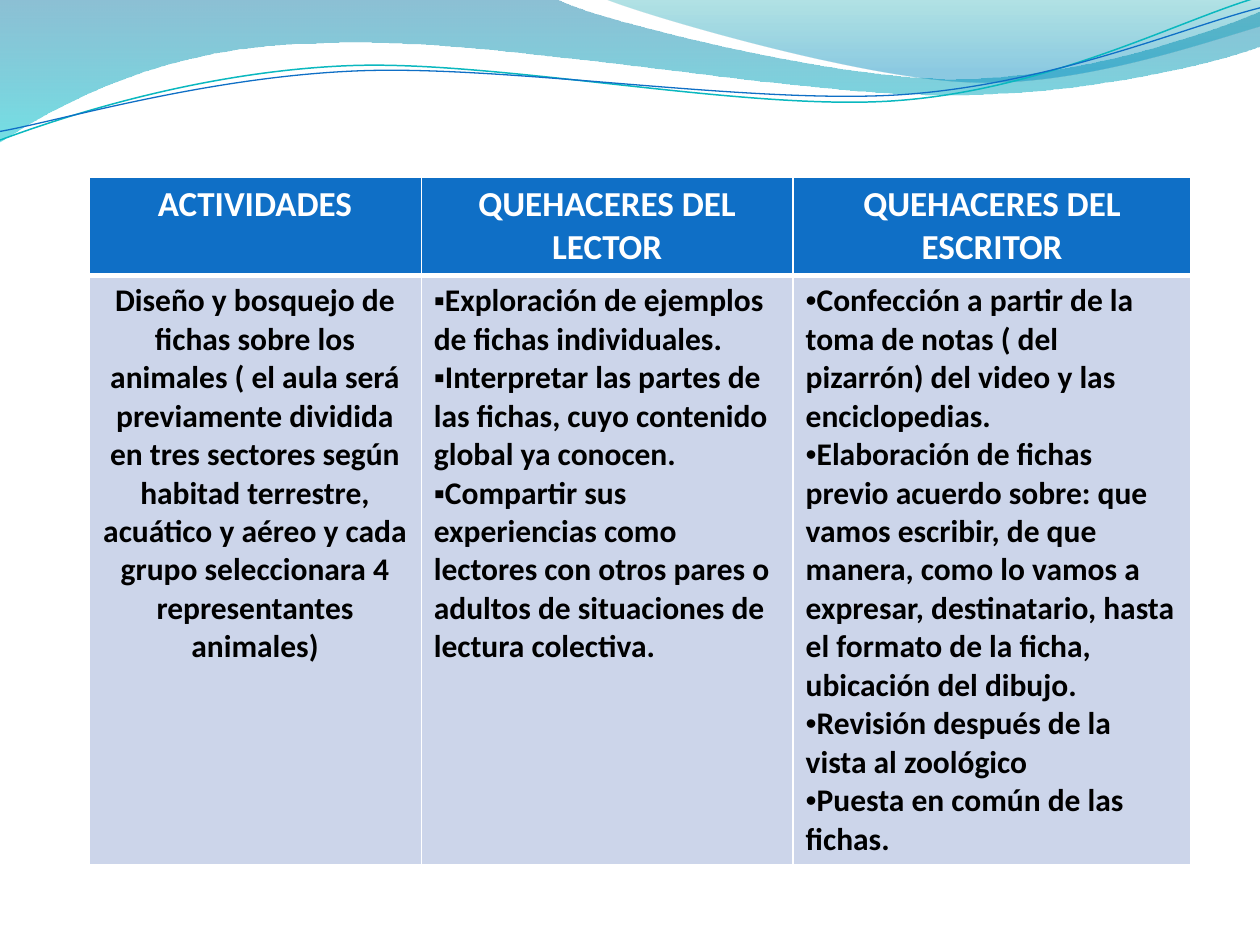
"""Build the slide with the reader and writer activities table under a wave header."""
from lxml.etree import SubElement
from pptx import Presentation
from pptx.dml.color import RGBColor
from pptx.enum.text import PP_ALIGN as Align
from pptx.oxml.ns import qn
from pptx.util import Pt

WHITE, BLUE, PALE = "FFFFFF", "0F6FC6", "CCD5EA"

WAVES = [
    ((0, -1), [(317, -1), (343, 12, 478, 45, 546, 45), (614, 45, 690, 19, 720, 6.5),
               (721, 26), (708, 32, 626, 55, 537, 54), (448, 54, 275, 20, 185, 24.5),
               (93, 25, 33, 60, -1, 81.5), (0, -1)],
     [(0, "0074A1", 45), (1, "00C6CF", 55)]),
    ((345, -1), [(366, 8, 491, 45, 554, 47), (616, 50, 692, 23, 720, 15), (720, 0),
                 (345, -1)],
     [(0, "00A1A9", 30), (0.8, "008BBF", 45)]),
]
LINES = [
    ((-1.4, 63.1), [(34.2, 51.7, 114.3, 29.4, 199.4, 30),
                    (284.4, 30.5, 425.8, 67.2, 512, 64.7),
                    (599.2, 62.3, 676.1, 25.9, 720.6, 15.4)], "0AB8BF", 0.85),
    ((-1.1, 58.1), [(33.1, 53.7, 118.2, 32.6, 204.3, 33.2),
                    (290.3, 33.7, 429.1, 63.3, 515.3, 61.4),
                    (601.4, 59.4, 679, 30, 721.4, 21.5)], BLUE, 0.75),
]
HEADERS = ["ACTIVIDADES", "QUEHACERES DEL LECTOR", "QUEHACERES DEL ESCRITOR"]
BODY = [
    (None, ["Diseño y bosquejo de fichas sobre los animales ( el aula será previamente "
            "dividida en tres sectores según habitad terrestre, acuático y aéreo y cada "
            "grupo seleccionara 4 representantes animales)"]),
    ("▪", ["Exploración de ejemplos de fichas individuales.",
           "Interpretar las partes de las fichas, cuyo contenido global ya conocen.",
           "Compartir sus experiencias como lectores con otros pares o adultos de "
           "situaciones de lectura colectiva."]),
    ("•", ["Confección a partir de la toma de notas ( del pizarrón) del video y las "
           "enciclopedias.",
           "Elaboración de fichas previo acuerdo sobre: que vamos escribir, de que manera, "
           "como lo vamos a expresar, destinatario, hasta el formato de la ficha, "
           "ubicación del dibujo.",
           "Revisión después de la vista al zoológico",
           "Puesta en común de las fichas."]),
]


def rgb(color):
    """Turn a hex string into a colour."""
    return RGBColor.from_string(color)


def add_outline(s, start, segments, close):
    """Add a freeform of straight (2 values) and cubic (6 values) segments."""
    points = [(Pt(x), Pt(y)) for seg in segments for x, y in zip(seg[::2], seg[1::2])]
    builder = s.shapes.build_freeform(Pt(start[0]), Pt(start[1]))
    builder.add_line_segments(points, close=close)
    sp = builder.convert_to_shape()
    sp.shadow.inherit = False
    steps = iter(list(sp.element.iter(qn("a:lnTo"))))
    for seg in segments:
        step = next(steps)
        if len(seg) == 6:
            curve = step.makeelement(qn("a:cubicBezTo"))
            step.addprevious(curve)
            for part in (step, next(steps), next(steps)):
                curve.append(part[0])
                part.getparent().remove(part)
    return sp


def add_wave(s, start, segments, stops):
    """Add a closed wave with a translucent top-to-bottom gradient."""
    sp = add_outline(s, start, segments, True)
    sp.line.fill.background()
    sp.fill.gradient()
    sp.fill.gradient_angle = 270
    for stop, (position, color, _) in zip(sp.fill.gradient_stops, stops):
        stop.position = position
        stop.color.rgb = rgb(color)
    for clr, (_, _, opacity) in zip(sp.element.iter(qn("a:srgbClr")), stops):
        SubElement(clr, qn("a:alpha"), val=str(opacity * 1000))


def add_curve(s, start, segments, color, width):
    """Add an open curved line, slightly tilted."""
    sp = add_outline(s, start, segments, False)
    sp.rotation = 357.3
    sp.fill.background()
    sp.line.color.rgb = rgb(color)
    sp.line.width = Pt(width)


def set_borders(cell, top, bottom):
    """Give a cell white borders with the given top and bottom widths."""
    tc_pr = cell._tc.get_or_add_tcPr()
    for side, width in zip("LRTB", (1, 1, top, bottom)):
        ln = SubElement(tc_pr, qn(f"a:ln{side}"), w=str(Pt(width)))
        fill = SubElement(ln, qn("a:solidFill"))
        SubElement(fill, qn("a:srgbClr"), val=WHITE)


def fill_cell(cell, texts, size, color, fill, bullet=None):
    """Write bold paragraphs in a cell, bulleted or centred."""
    cell.fill.solid()
    cell.fill.fore_color.rgb = rgb(fill)
    tf = cell.text_frame
    tf.text = "\n".join(texts)
    for p in tf.paragraphs:
        p.alignment = Align.LEFT if bullet else Align.CENTER
        if bullet:
            p_pr = p._p.get_or_add_pPr()
            SubElement(p_pr, qn("a:buFont"), typeface="Arial")
            SubElement(p_pr, qn("a:buChar"), char=bullet)
        for r in p.runs:
            r.font.name = "Calibri"
            r.font.size = Pt(size)
            r.font.bold = True
            r.font.color.rgb = rgb(color)


def add_activities(s):
    """Add the table of activities."""
    widths, heights = (190, 212.5, 227.5), (46, 314)
    table = s.shapes.add_table(2, 3, Pt(50.75), Pt(101.25), Pt(sum(widths)),
                               Pt(sum(heights))).table
    for row, height in zip(table.rows, heights):
        row.height = Pt(height)
    for i, (width, header, (bullet, texts)) in enumerate(zip(widths, HEADERS, BODY)):
        table.columns[i].width = Pt(width)
        head, body = table.cell(0, i), table.cell(1, i)
        set_borders(head, 1, 3)
        set_borders(body, 3, 1)
        fill_cell(head, [header], 20, WHITE, BLUE)
        fill_cell(body, texts, 18, "000000", PALE, bullet)


def main():
    """Build and save the slide."""
    prs = Presentation()
    prs.slide_width, prs.slide_height = Pt(720), Pt(540)
    s = prs.slides.add_slide(prs.slide_layouts[6])
    for wave in WAVES:
        add_wave(s, *wave)
    for line in LINES:
        add_curve(s, *line)
    add_activities(s)
    prs.save("out.pptx")


if __name__ == "__main__":
    main()
